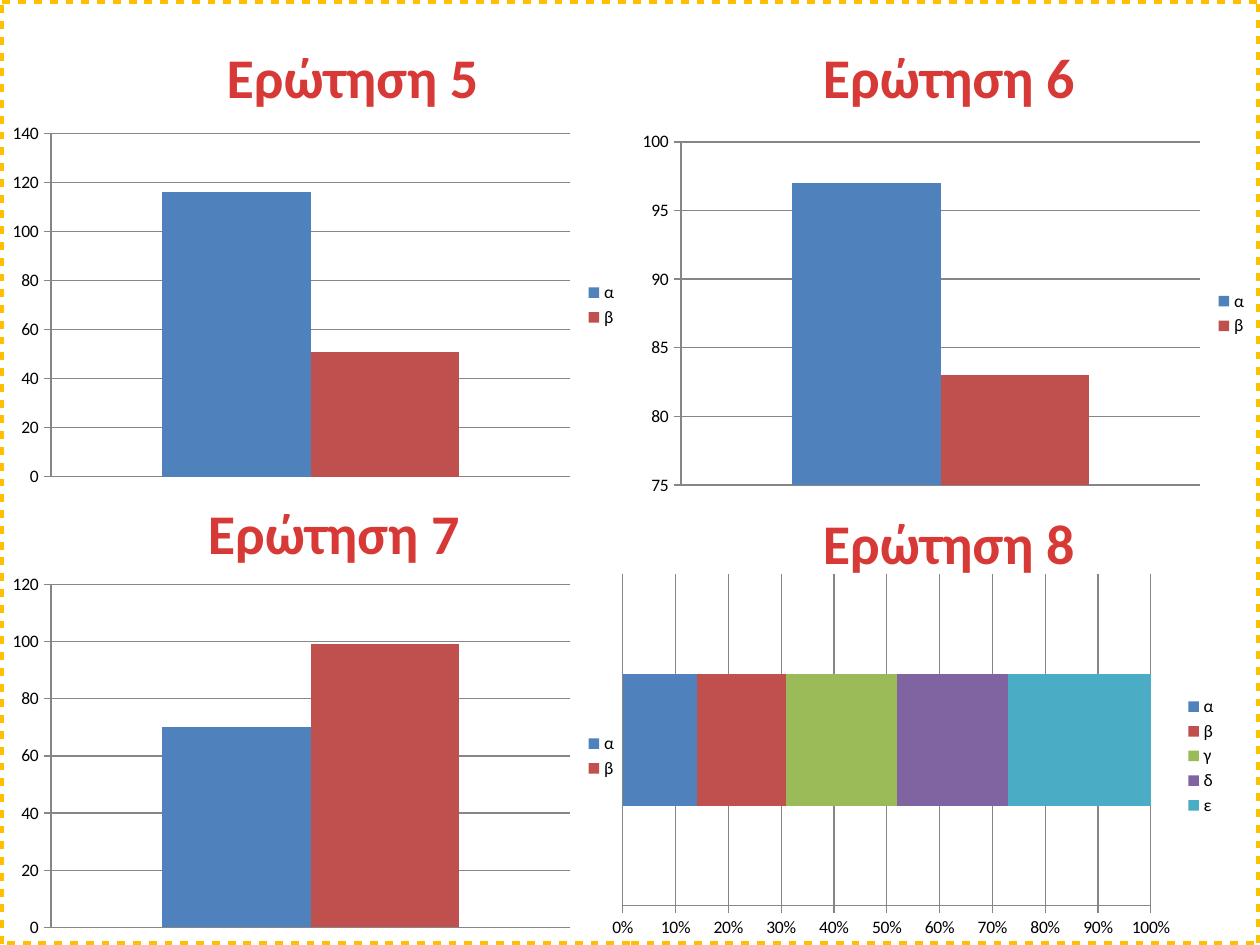
import lxml.etree
import pptx
import pptx.chart.data
import pptx.dml.color
import pptx.enum.chart
import pptx.enum.dml
import pptx.enum.shapes
import pptx.enum.text
import pptx.oxml.ns
import pptx.util

Cm = pptx.util.Cm
Pt = pptx.util.Pt
Kind = pptx.enum.chart.XL_CHART_TYPE

HUES = {
    "title": "D73A36",
    "frame": "FFC000",
    "text": "000000",
    "grid": "868686",
    "α": "4F81BD",
    "β": "C0504D",
    "γ": "9BBB59",
    "δ": "8064A2",
    "ε": "4BACC6",
}
WIDE, HIGH = 25.4, 19.05


def tint(name):
    return pptx.dml.color.RGBColor.from_string(HUES[name])


class Board:
    font = "Calibri"

    def __init__(self, slide):
        self.slide = slide

    def title(self, text, left, top):
        box = self.slide.shapes.add_textbox(Cm(left), Cm(top), Cm(5.64), Cm(1.63))
        frame = box.text_frame
        frame.text = text
        frame.word_wrap = False
        frame.auto_size = pptx.enum.text.MSO_AUTO_SIZE.SHAPE_TO_FIT_TEXT
        para = frame.paragraphs[0]
        para.alignment = pptx.enum.text.PP_ALIGN.CENTER
        run = para.runs[0]
        run.font.name = self.font
        run.font.size = Pt(32)
        run.font.bold = True
        run.font.color.rgb = tint("title")
        self.edge(run, "title", 1.42)

    def edge(self, run, hue, width):
        qn = pptx.oxml.ns.qn
        line = lxml.etree.Element(qn("a:ln"), w=str(int(Pt(width))))
        fill = lxml.etree.SubElement(line, qn("a:solidFill"))
        lxml.etree.SubElement(fill, qn("a:srgbClr"), val=HUES[hue])
        run._r.get_or_add_rPr().insert(0, line)

    def chart(self, kind, votes, left, top, scale, form):
        data = pptx.chart.data.CategoryChartData()
        data.categories = ["1"]
        for name, count in votes.items():
            data.add_series(name, [count])
        chart = self.slide.shapes.add_chart(
            kind, Cm(left), Cm(top), Cm(12.7), Cm(7.62), data
        ).chart
        chart.has_title = False
        chart.font.name = self.font
        chart.font.size = Pt(10)
        chart.font.color.rgb = tint("text")
        chart.has_legend = True
        chart.legend.position = pptx.enum.chart.XL_LEGEND_POSITION.RIGHT
        chart.legend.include_in_layout = False
        chart.category_axis.visible = False
        self.axis(chart.value_axis, scale, form)
        plot = chart.plots[0]
        plot.vary_by_categories = False
        plot.gap_width = 150
        plot.overlap = 100 if kind == Kind.BAR_STACKED_100 else 0
        for item in plot.series:
            item.invert_if_negative = False
            item.format.fill.solid()
            item.format.fill.fore_color.rgb = tint(item.name)

    def axis(self, axis, scale, form):
        axis.minimum_scale, axis.maximum_scale, axis.major_unit = scale
        axis.major_tick_mark = pptx.enum.chart.XL_TICK_MARK.CROSS
        axis.minor_tick_mark = pptx.enum.chart.XL_TICK_MARK.NONE
        axis.tick_labels.number_format = form
        axis.tick_labels.number_format_is_linked = False
        axis.has_major_gridlines = True
        for line in (axis.format.line, axis.major_gridlines.format.line):
            line.color.rgb = tint("grid")
            line.width = Pt(0.75)

    def frame(self):
        rect = self.slide.shapes.add_shape(
            pptx.enum.shapes.MSO_SHAPE.RECTANGLE, 0, 0, Cm(WIDE), Cm(HIGH)
        )
        rect.shadow.inherit = False
        rect.fill.background()
        rect.line.color.rgb = tint("frame")
        rect.line.width = Pt(4.5)
        rect.line.dash_style = pptx.enum.dml.MSO_LINE.ROUND_DOT


def main():
    deck = pptx.Presentation()
    deck.slide_width, deck.slide_height = Cm(WIDE), Cm(HIGH)
    board = Board(deck.slides.add_slide(deck.slide_layouts[6]))
    bars, stack = Kind.COLUMN_CLUSTERED, Kind.BAR_STACKED_100
    five = {"α": 14, "β": 17, "γ": 21, "δ": 21, "ε": 27}
    polls = [
        (5, (4.29, 0.74), (0, 2.34), bars, {"α": 116, "β": 51}, (0, 140, 20), "General"),
        (6, (16.31, 0.74), (12.7, 2.51), bars, {"α": 97, "β": 83}, (75, 100, 5), "General"),
        (7, (3.91, 9.93), (0, 11.43), bars, {"α": 70, "β": 99}, (0, 120, 20), "General"),
        (8, (16.31, 10.13), (12.09, 11.43), stack, five, (0, 1, 0.1), "0%"),
    ]
    for num, head, spot, kind, votes, scale, form in polls:
        board.title(f"Ερώτηση {num}", *head)
        board.chart(kind, votes, *spot, scale, form)
    board.frame()
    deck.save("out.pptx")


if __name__ == "__main__":
    main()
